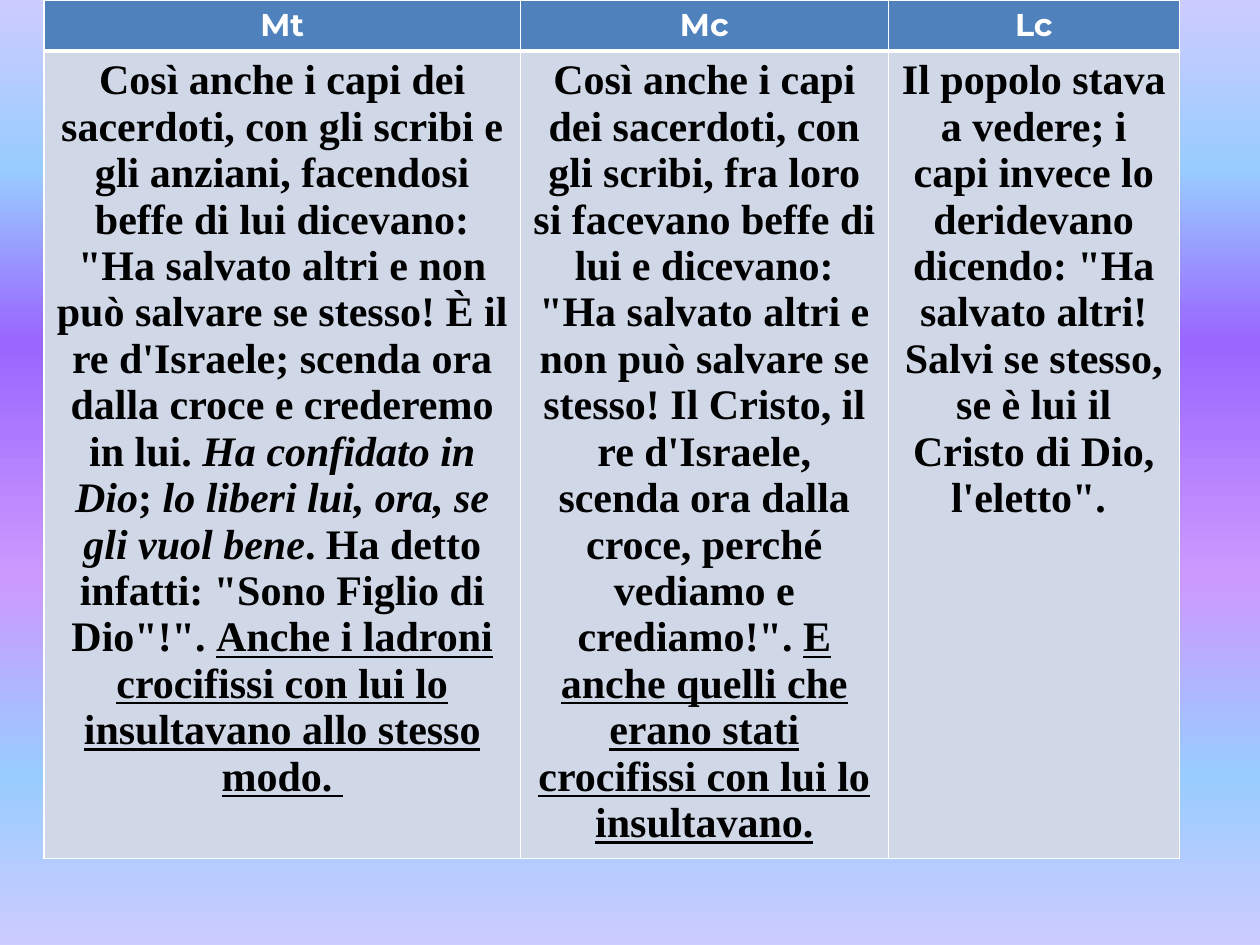
from copy import deepcopy

from lxml import etree
from pptx import Presentation
from pptx import util as u
from pptx.dml.color import RGBColor
from pptx.enum import text
from pptx.oxml import ns

COLORS = {"header": "4F81BD", "body": "D0D8E8", "white": "FFFFFF", "black": "000000"}
BACKDROP = [(0, "CCCCFF"), (0.18, "99CCFF"), (0.36, "9966FF"),
            (0.61, "CC99FF"), (0.82, "99CCFF"), (1, "CCCCFF")]

HEADER_FORMAT = {"name": "Montserrat", "size": u.Pt(18), "bold": True}
VERSE_FORMAT = {"name": "Times New Roman", "size": u.Pt(24), "bold": True}
ITALIC = {"italic": True}
UNDERLINE = {"underline": True}

# Each gospel: heading, column width, verse as (words, extra format)
GOSPELS = [
    ("Mt", 3.78, [
        ("Così anche i capi dei sacerdoti, con gli scribi e gli anziani, facendosi "
         "beffe di lui dicevano: \"Ha salvato altri e non può salvare se stesso! È il "
         "re d'Israele; scenda ora dalla croce e crederemo in lui. ", {}),
        ("Ha confidato in Dio", ITALIC),
        ("; ", {}),
        ("lo liberi lui, ora, se gli vuol bene", ITALIC),
        (". Ha detto infatti: \"Sono Figlio di Dio\"!\". ", {}),
        ("Anche i ladroni crocifissi con lui lo insultavano allo stesso modo. ", UNDERLINE),
    ]),
    ("Mc", 2.92, [
        ("Così anche i capi dei sacerdoti, con gli scribi, fra loro si facevano beffe di "
         "lui e dicevano: \"Ha salvato altri e non può salvare se stesso! Il Cristo, il "
         "re d'Israele, scenda ora dalla croce, perché vediamo e crediamo!\". ", {}),
        ("E anche quelli che erano stati crocifissi con lui lo insultavano.", UNDERLINE),
    ]),
    ("Lc", 2.31, [
        ("Il popolo stava a vedere; i capi invece lo deridevano dicendo: \"Ha salvato "
         "altri! Salvi se stesso, se è lui il Cristo di Dio, l'eletto\". ", {}),
    ]),
]


def rgb(name):
    return RGBColor.from_string(COLORS[name])


def paint_backdrop(slide):
    fill = slide.background.fill
    fill.gradient()
    fill.gradient_angle = 270
    stop_list = slide.background._cSld.find(".//" + ns.qn("a:gsLst"))
    model = deepcopy(stop_list[0])
    for stop in list(stop_list):
        stop_list.remove(stop)
    for _ in BACKDROP:
        stop_list.append(deepcopy(model))
    for stop, (position, color) in zip(fill.gradient_stops, BACKDROP):
        stop.position = position
        stop.color.rgb = RGBColor.from_string(color)


def set_borders(cell, bottom):
    """White cell borders; they must come before the fill."""
    properties = cell._tc.get_or_add_tcPr()
    for index, (side, width) in enumerate(
            [("lnL", 1), ("lnR", 1), ("lnT", 1), ("lnB", bottom)]):
        line = etree.Element(ns.qn("a:" + side), w=str(u.Pt(width)))
        solid = etree.SubElement(line, ns.qn("a:solidFill"))
        etree.SubElement(solid, ns.qn("a:srgbClr"), val=COLORS["white"])
        properties.insert(index, line)


def fill_cell(cell, runs, base, ink, ground, bottom=1):
    cell.fill.solid()
    cell.fill.fore_color.rgb = rgb(ground)
    set_borders(cell, bottom)
    paragraph = cell.text_frame.paragraphs[0]
    paragraph.alignment = text.PP_ALIGN.CENTER
    for words, extra in runs:
        run = paragraph.add_run()
        run.text = words
        for key, value in {**base, **extra}.items():
            setattr(run.font, key, value)
        run.font.color.rgb = rgb(ink)


def add_synopsis(slide, left, top, width, height, header_height):
    table = slide.shapes.add_table(2, len(GOSPELS), left, top, width, height).table
    table.rows[0].height = header_height
    table.rows[1].height = height - header_height
    for column, (gospel, column_width, verse) in enumerate(GOSPELS):
        table.columns[column].width = u.Inches(column_width)
        fill_cell(table.cell(0, column), [(gospel, {})], HEADER_FORMAT,
                  "white", "header", bottom=3)
        fill_cell(table.cell(1, column), verse, VERSE_FORMAT, "black", "body")


def main():
    deck = Presentation()
    deck.slide_width, deck.slide_height = u.Inches(10), u.Inches(7.5)
    slide = deck.slides.add_slide(deck.slide_layouts[6])
    paint_backdrop(slide)
    add_synopsis(slide, u.Inches(0.35), u.Inches(0), u.Inches(9.01), u.Inches(6.81),
                 header_height=u.Inches(0.4))
    deck.save("out.pptx")


if __name__ == "__main__":
    main()
